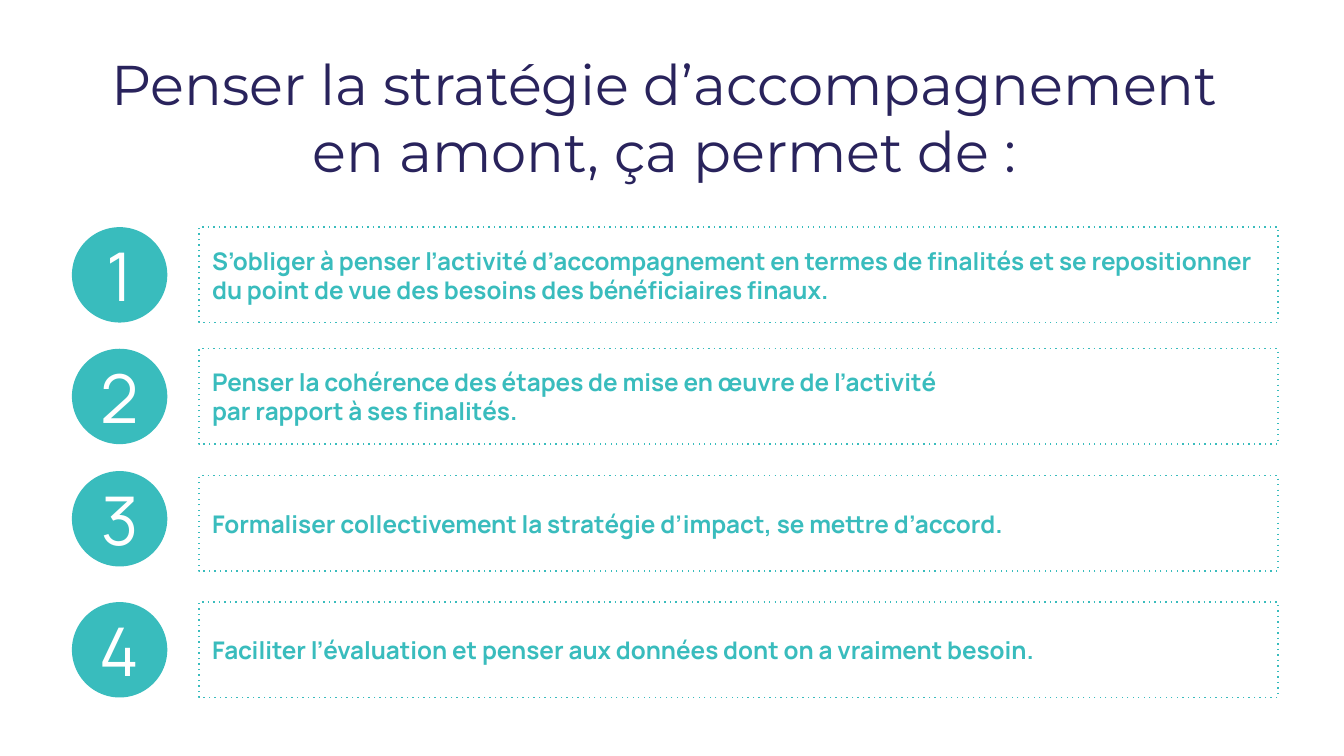
from dataclasses import dataclass

from pptx import Presentation
from pptx.dml.color import RGBColor as Rgb
from pptx.enum.dml import MSO_LINE as Dash
from pptx.enum.shapes import MSO_SHAPE as Kind
from pptx.enum.text import MSO_ANCHOR as Anchor, MSO_AUTO_SIZE as Fit, PP_ALIGN as Align
from pptx.oxml.ns import qn
from pptx.util import Pt

PX = 4572  # 200 px to the inch
WIDE, HIGH = 2000, 1125
SIDE = 142
DISC_X, BOX_X, BOX_W = 107, 296, 1606
COLORS = {"teal": "39BCBD", "navy": "29235C", "white": "FFFFFF"}
FORMATS = {
    "title": {"name": "Montserrat", "size": Pt(30), "bold": False},
    "disc": {"name": "Manrope", "size": Pt(36), "bold": False},
    "box": {"name": "Manrope", "size": Pt(13), "bold": True},
}


@dataclass
class Step:
    text: str
    disc_y: int
    box_y: int


TITLE = "Penser la stratégie d’accompagnement \nen amont, ça permet de : "
STEPS = [
    Step("S’obliger à penser l’activité d’accompagnement en termes de finalités "
         "et se repositionner du point de vue des besoins des bénéficiaires finaux.", 338, 338),
    Step("Penser la cohérence des étapes de mise en œuvre de l’activité \v"
         "par rapport à ses finalités.", 519, 519),
    Step("Formaliser collectivement la stratégie d’impact, se mettre d’accord.", 701, 708),
    Step("Faciliter l’évaluation et penser aux données dont on a vraiment besoin.", 896, 896),
]


def color(name: str) -> Rgb:
    return Rgb.from_string(COLORS[name])


def write(shape, text: str, style: str, ink: str, align: Align, anchor: Anchor, inset: int) -> None:
    frame = shape.text_frame
    frame.text = text
    values = {"word_wrap": True, "auto_size": Fit.NONE, "vertical_anchor": anchor}
    values |= {f"margin_{side}": inset * PX for side in ("left", "top", "right", "bottom")}
    for key, value in values.items():
        setattr(frame, key, value)
    for para in frame.paragraphs:
        para.alignment = align
        for run in para.runs:
            for key, value in FORMATS[style].items():
                setattr(run.font, key, value)
            run.font.color.rgb = color(ink)


def add_shape(slide, kind: Kind, x: int, y: int, width: int, fill: str):
    shape = slide.shapes.add_shape(kind, x * PX, y * PX, width * PX, SIDE * PX)
    shape.shadow.inherit = False
    shape.fill.solid()
    shape.fill.fore_color.rgb = color(fill)
    return shape


def add_box(slide, step: Step) -> None:
    box = add_shape(slide, Kind.RECTANGLE, BOX_X, step.box_y, BOX_W, "white")
    box.line.color.rgb = color("teal")
    box.line.width = Pt(0.75)
    box.line.dash_style = Dash.ROUND_DOT
    # The plain "dot" preset has wider gaps and no enum member.
    box.element.find(".//" + qn("a:prstDash")).set("val", "dot")
    write(box, step.text, "box", "teal", Align.LEFT, Anchor.MIDDLE, 20)


def add_disc(slide, step: Step, number: int) -> None:
    disc = add_shape(slide, Kind.OVAL, DISC_X, step.disc_y, SIDE, "teal")
    disc.line.fill.background()
    write(disc, str(number), "disc", "white", Align.CENTER, Anchor.MIDDLE, 20)


def set_title(slide) -> None:
    title = slide.shapes.title
    place = {"left": 0, "top": 64, "width": WIDE, "height": 220}
    for key, value in place.items():
        setattr(title, key, value * PX)
    write(title, TITLE, "title", "navy", Align.CENTER, Anchor.TOP, 10)


def main() -> None:
    deck = Presentation()
    deck.slide_width, deck.slide_height = WIDE * PX, HIGH * PX
    slide = deck.slides.add_slide(deck.slide_layouts.get_by_name("Title Only"))
    set_title(slide)
    for number, step in enumerate(STEPS, 1):
        add_box(slide, step)
        add_disc(slide, step, number)
    deck.save("out.pptx")


if __name__ == "__main__":
    main()
